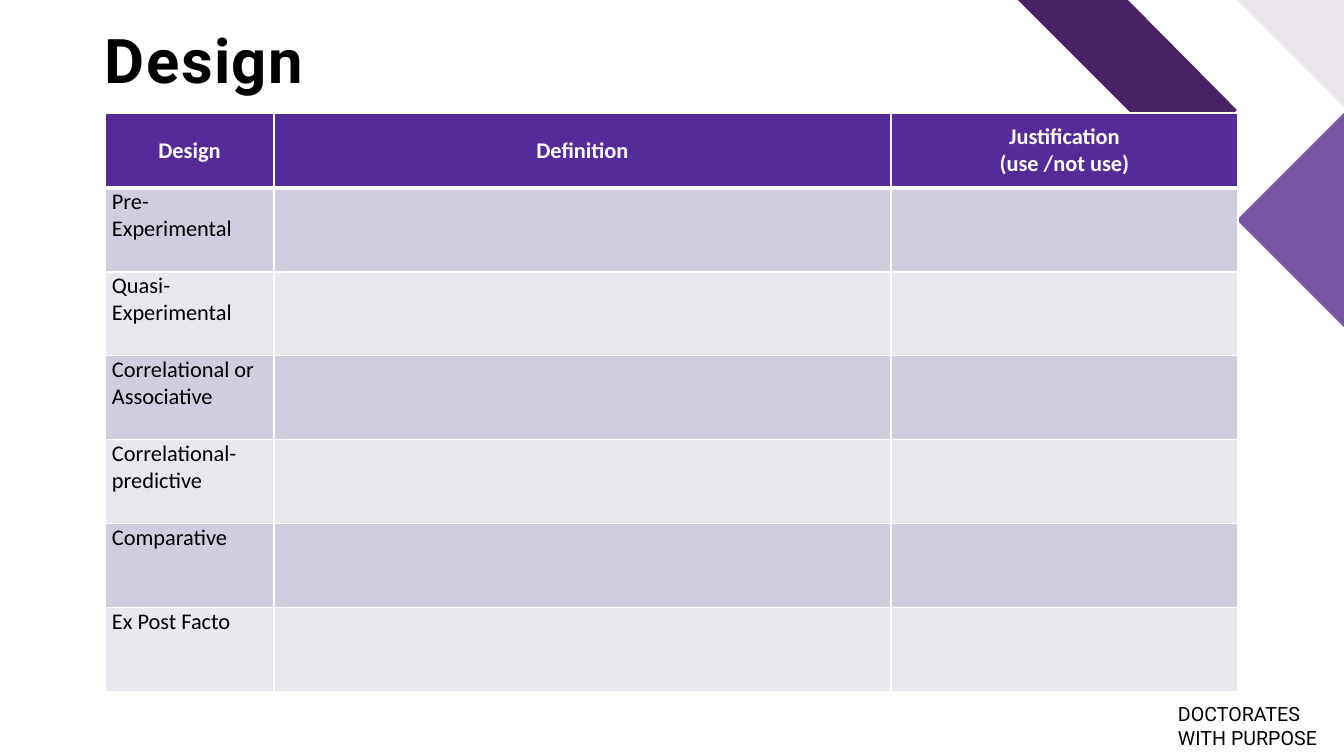
from lxml.etree import SubElement
from pptx import Presentation
from pptx.dml.color import RGBColor as Rgb
from pptx.enum.text import MSO_ANCHOR as Anchor, PP_ALIGN as Align
from pptx.oxml.ns import qn
from pptx.util import Pt

COLORS = {
    "black": "000000", "white": "FFFFFF", "header": "552B9A",
    "band_dark": "D1CDDE", "band_light": "E9E8EF",
    "plum": "492366", "mist": "EAE5EB", "violet": "7757A4",
}
EMU_PER_PX = 914400 / 100.8

HEADINGS = [["Design"], ["Definition"], ["Justification", "(use /not use)"]]
DESIGNS = [
    "Pre-Experimental", "Quasi-Experimental", "Correlational or Associative",
    "Correlational-predictive", "Comparative", "Ex Post Facto",
]
COLUMN_WIDTHS = [169, 617, 347]
HEADER_HEIGHT, ROW_HEIGHT = 75, 84


def emu(px):
    return round(px * EMU_PER_PX)


def rgb(name):
    return Rgb.from_string(COLORS[name])


class SlideBuilder:
    def __init__(self, page):
        self.page = page

    def style(self, para, font, size, color, bold=False):
        para.font.name = font
        para.font.size = Pt(size)
        para.font.bold = bold
        para.font.color.rgb = rgb(color)

    def polygon(self, points, color):
        points = [(emu(x), emu(y)) for x, y in points]
        outline = self.page.shapes.build_freeform(*points[0])
        outline.add_line_segments(points[1:], close=True)
        shape = outline.convert_to_shape()
        shape.shadow.inherit = False
        shape.fill.solid()
        shape.fill.fore_color.rgb = rgb(color)
        shape.line.fill.background()

    def text(self, left, top, width, height, words, size, bold=False,
             anchor=Anchor.TOP, line_spacing=None, tracking=0):
        """Add a text box without insets; tracking is in points."""
        box = self.page.shapes.add_textbox(*map(emu, (left, top, width, height)))
        frame = box.text_frame
        frame.word_wrap = True
        frame.vertical_anchor = anchor
        frame.margin_left = frame.margin_right = 0
        frame.margin_top = frame.margin_bottom = 0
        para = frame.paragraphs[0]
        para.line_spacing = line_spacing
        self.style(para, "Roboto", size, "black", bold)
        span = para.add_run()
        span.text = words
        if tracking:
            span._r.get_or_add_rPr().set("spc", str(tracking * 100))

    def cell(self, cell, fill, top=1, bottom=1):
        """Fill a cell and draw its white borders; widths are in points."""
        properties = cell._tc.get_or_add_tcPr()
        for side, width in (("L", 1), ("R", 1), ("T", top), ("B", bottom)):
            line = SubElement(properties, qn(f"a:ln{side}"), w=str(Pt(width)))
            solid = SubElement(line, qn("a:solidFill"))
            SubElement(solid, qn("a:srgbClr"), val=COLORS["white"])
        cell.fill.solid()
        cell.fill.fore_color.rgb = rgb(fill)

    def design_table(self, left, top):
        height = HEADER_HEIGHT + ROW_HEIGHT * len(DESIGNS)
        table = self.page.shapes.add_table(
            len(DESIGNS) + 1, len(HEADINGS),
            *map(emu, (left, top, sum(COLUMN_WIDTHS), height))).table
        for column, width in zip(table.columns, COLUMN_WIDTHS):
            column.width = emu(width)
        for index, row in enumerate(table.rows):
            row.height = emu(ROW_HEIGHT if index else HEADER_HEIGHT)

        for column, lines in enumerate(HEADINGS):
            cell = table.cell(0, column)
            self.cell(cell, "header", bottom=3)
            cell.vertical_anchor = Anchor.MIDDLE
            cell.text_frame.text = "\n".join(lines)
            for para in cell.text_frame.paragraphs:
                para.alignment = Align.CENTER
                self.style(para, "Calibri", 16, "white", bold=True)

        for row, design in enumerate(DESIGNS, 1):
            for column in range(len(HEADINGS)):
                self.cell(table.cell(row, column),
                          "band_dark" if row % 2 else "band_light",
                          top=3 if row == 1 else 1)
            cell = table.cell(row, 0)
            cell.margin_left = cell.margin_right = emu(7)
            cell.margin_top = cell.margin_bottom = 0
            cell.text_frame.text = design
            para = cell.text_frame.paragraphs[0]
            para.space_after = Pt(2)
            self.style(para, "Calibri", 16, "black")


def main():
    deck = Presentation()
    deck.slide_width, deck.slide_height = emu(1344), emu(756)
    slide = SlideBuilder(deck.slides.add_slide(deck.slide_layouts[6]))

    slide.polygon([(1018, 0), (1128, 0), (1237, 110), (1182, 164)], "plum")
    slide.polygon([(1237, 0), (1344, 0), (1344, 107)], "mist")
    slide.polygon([(1344, 113), (1237, 220), (1344, 327)], "violet")
    slide.text(105, 30, 544, 67, "Design", 44, bold=True,
               anchor=Anchor.BOTTOM, line_spacing=0.9, tracking=1)
    slide.design_table(105, 113)
    slide.text(1178, 702, 145, 37, "DOCTORATES WITH PURPOSE", 14)

    deck.save("out.pptx")


if __name__ == "__main__":
    main()
